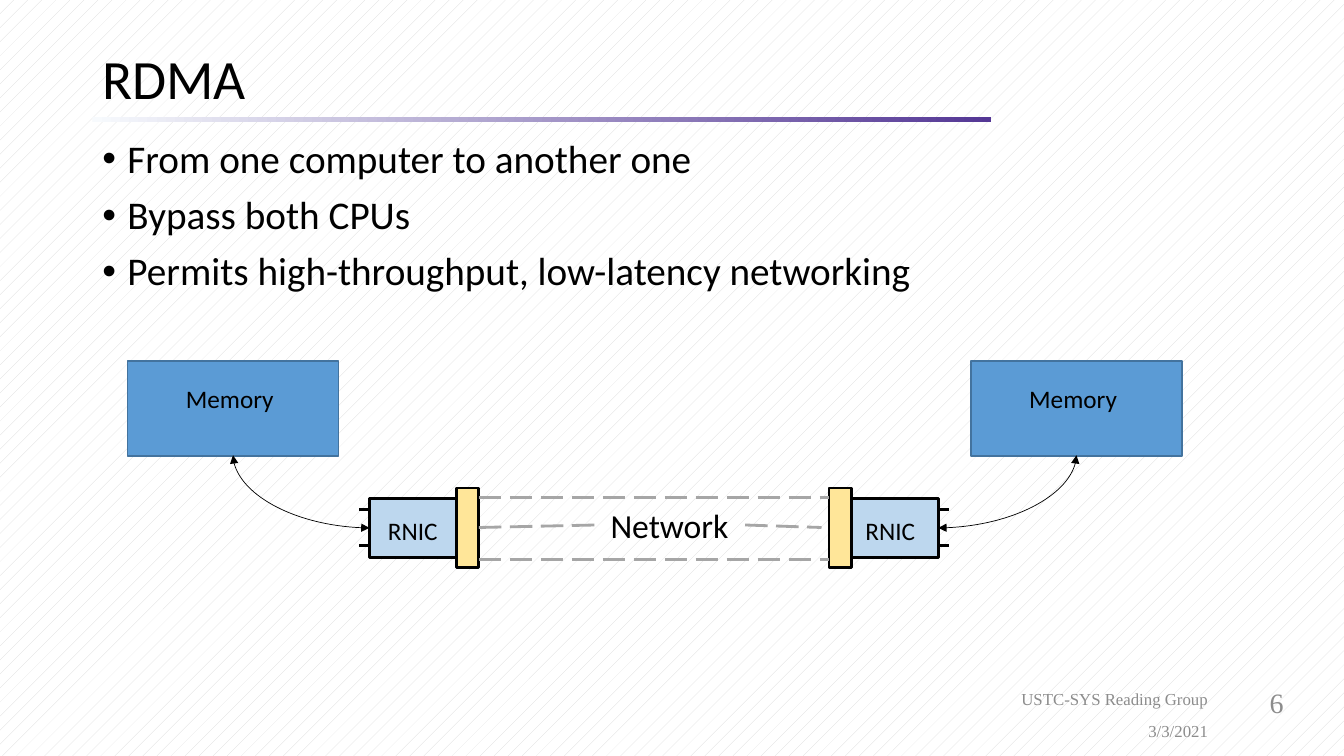
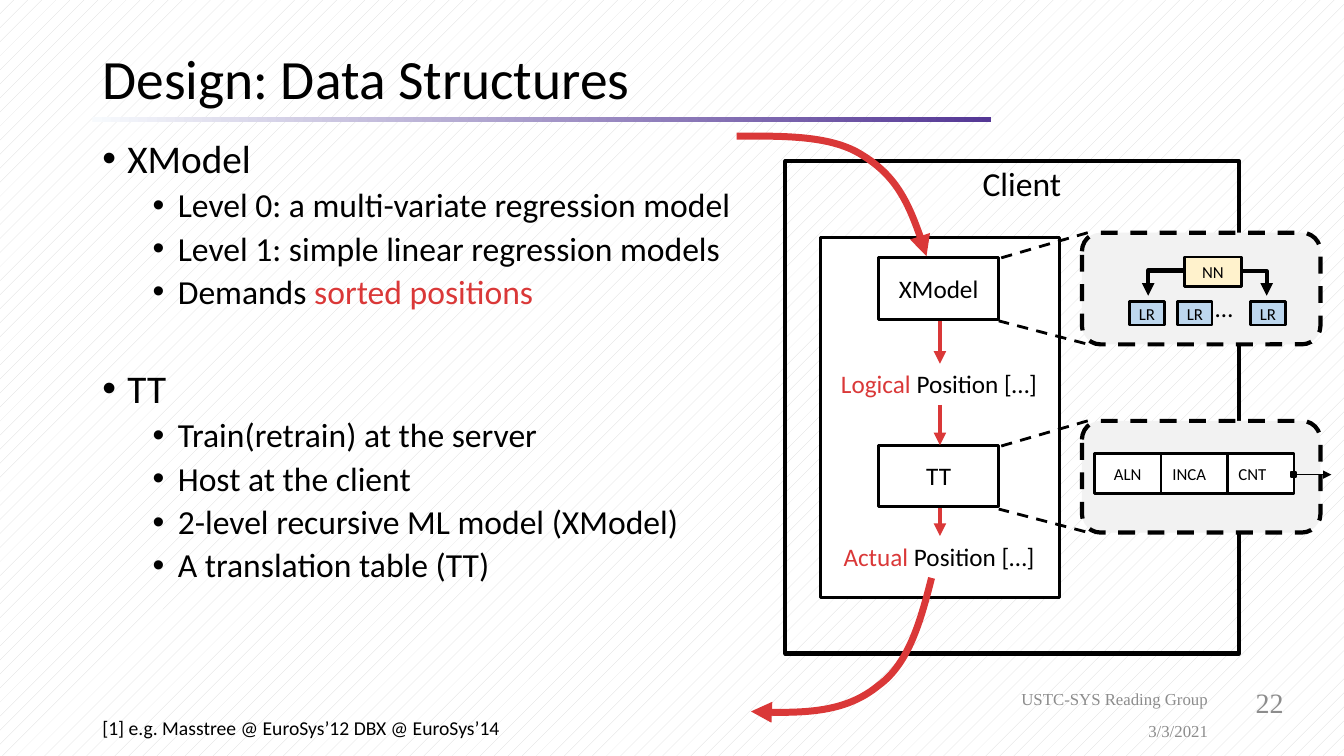
from lxml.etree import SubElement
from pptx import Presentation
from pptx.dml.color import RGBColor
from pptx.enum.dml import MSO_LINE as DASH, MSO_PATTERN as PATTERN
from pptx.enum.shapes import MSO_CONNECTOR as LINK, MSO_SHAPE as SHAPE
from pptx.enum.text import MSO_ANCHOR as ANCHOR, MSO_AUTO_SIZE as AUTO, PP_ALIGN as ALIGN
from pptx.oxml.ns import qn
from pptx.util import Inches, Pt

COLUMNS, ROWS = 160, 90  # square grid cells
CELL = Inches(1 / 12)

BLACK, WHITE, RED = "000000", "FFFFFF", "DA3838"
GREY, DASH_GREY, PANEL = "8C8C8C", "A6A6A6", "F2F2F2"
CARD_BLUE, PORT_YELLOW, ROOT_YELLOW = "BDD7EE", "FFE699", "FFF2CC"
MEMORY_BLUE, MEMORY_EDGE = "5B9BD5", "43739E"
SANS, SERIF = "Calibri", "Times New Roman"


def rgb(code):
    return RGBColor.from_string(code)


def cells(*lengths):
    return [round(length * CELL) for length in lengths]


def put(target, **values):
    for name, value in values.items():
        setattr(target, name, value)


class Deck:
    """The shared style and the slide being drawn."""

    def __init__(self):
        self.deck = Presentation()
        put(self.deck, slide_width=COLUMNS * CELL, slide_height=ROWS * CELL)
        self.shapes = None

    def new_slide(self, title, number):
        slide = self.deck.slides.add_slide(self.deck.slide_layouts[5])
        self.shapes = slide.shapes
        # Hatched background
        ground = slide.background.fill
        ground.patterned()
        ground.pattern = PATTERN.PERCENT_5
        put(ground.fore_color, rgb=rgb("D9D9D9"))
        put(ground.back_color, rgb=rgb(WHITE))
        # Title with the fading rule below it
        heading = self.shapes.title
        left, top, width, height = cells(11, 5.2, 138, 9)
        put(heading, left=left, top=top, width=width, height=height)
        put(heading.text_frame, auto_size=AUTO.NONE, word_wrap=True,
            vertical_anchor=ANCHOR.MIDDLE)
        self.typeset(heading.text_frame.paragraphs[0], title, 39.6,
                     alignment=ALIGN.LEFT, line_spacing=0.9)
        rule = self.box(11, 13.9, 107, 0.6, edge=None)
        rule.fill.gradient()
        rule.fill.gradient_angle = 0
        for stop, code in zip(rule.fill.gradient_stops, ("F7FAFD", "543795")):
            stop.color.rgb = rgb(code)
        # Footer
        for place, text, size in (
                ((118, 81.7, 36, 3.8), number, 20),
                ((91, 81.7, 54, 3.1), "USTC-SYS Reading Group", 12),
                ((109, 85.3, 36, 3.4), "3/3/2021", 12)):
            self.label(*place, text, size, GREY, SERIF, ALIGN.RIGHT, ANCHOR.MIDDLE)

    def typeset(self, paragraph, text, size, color=BLACK, font=SANS, **layout):
        """Text is a string, or a list of (words, colour) runs."""
        put(paragraph, **layout)
        for words, code in [(text, color)] if isinstance(text, str) else text:
            run = paragraph.add_run()
            run.text = words
            put(run.font, size=Pt(size), name=font)
            run.font.color.rgb = rgb(code)

    def frame(self, left, top, width, height, anchor=ANCHOR.TOP):
        area = self.shapes.add_textbox(*cells(left, top, width, height)).text_frame
        put(area, word_wrap=True, vertical_anchor=anchor)
        return area

    def label(self, left, top, width, height, text, size, color=BLACK, font=SANS,
              align=ALIGN.CENTER, anchor=ANCHOR.TOP):
        area = self.frame(left, top, width, height, anchor)
        self.typeset(area.paragraphs[0], text, size, color, font, alignment=align)

    def indent(self, paragraph, level=0, bullet=None):
        props = paragraph._p.get_or_add_pPr()
        props.set("marL", str(Inches(0.25 + 0.5 * level)))
        props.set("indent", str(Inches(-0.25)))
        if bullet:
            SubElement(props, qn("a:buFont")).set("typeface", "Arial")
            SubElement(props, qn("a:buChar")).set("char", bullet)

    def bullets(self, items):
        """Items are (level, space before, text)."""
        area = self.frame(11, 16, 138, 65.2)
        for i, (level, before, text) in enumerate(items):
            paragraph = area.add_paragraph() if i else area.paragraphs[0]
            self.typeset(paragraph, text, (28, 24)[level], line_spacing=0.9,
                         space_before=Pt(before))
            self.indent(paragraph, level, "•")

    def footnote(self, text):
        paragraph = self.frame(11, 81.7, 77.8, 7, ANCHOR.BOTTOM).paragraphs[0]
        self.typeset(paragraph, text, 14, line_spacing=0.9)
        self.indent(paragraph)

    def stroke(self, shape, color, weight, dash=None, heads=()):
        put(shape.line, width=Pt(weight))
        shape.line.color.rgb = rgb(color)
        if dash:
            shape.line.dash_style = dash
        outline = shape.element.spPr.find(qn("a:ln"))
        for end in heads:
            SubElement(outline, qn("a:" + end)).set("type", "triangle")

    def box(self, left, top, width, height, fill=None, edge=BLACK, weight=2,
            text="", size=18, pads=(0, 0, 0, 0), kind=SHAPE.RECTANGLE, dash=None):
        """Pads are left, top, right and bottom, in cells."""
        shape = self.shapes.add_shape(kind, *cells(left, top, width, height))
        shape.shadow.inherit = False
        if fill:
            shape.fill.solid()
            shape.fill.fore_color.rgb = rgb(fill)
        else:
            shape.fill.background()
        if edge:
            self.stroke(shape, edge, weight, dash)
        else:
            shape.line.fill.background()
        if text:
            sides = ("margin_left", "margin_top", "margin_right", "margin_bottom")
            put(shape.text_frame, word_wrap=True, vertical_anchor=ANCHOR.MIDDLE,
                **dict(zip(sides, cells(*pads))))
            self.typeset(shape.text_frame.paragraphs[0], text, size,
                         alignment=ALIGN.CENTER)
        return shape

    def line(self, x1, y1, x2, y2, color=BLACK, weight=2, dash=None, heads=(),
             kind=LINK.STRAIGHT):
        link = self.shapes.add_connector(kind, *cells(x1, y1, x2, y2))
        self.stroke(link, color, weight, dash, heads)
        SubElement(link.element.spPr, qn("a:effectLst"))
        return link

    def corner(self, *ends, preset, **style):
        """A link with one turn: sideways first, then up or down."""
        link = self.line(*ends, kind=LINK.ELBOW, **style)
        link.element.spPr.find(qn("a:prstGeom")).set("prst", preset)

    def sweep(self, start, *points):
        """A thick red arrow; every three points make one Bézier curve."""
        outline = self.shapes.build_freeform(*cells(*start))
        outline.add_line_segments([cells(*point) for point in points], close=False)
        shape = outline.convert_to_shape()
        route = shape.element.find(".//" + qn("a:path"))
        for i, step in enumerate(route.findall(qn("a:lnTo"))):
            if i % 3 == 0:
                curve = SubElement(route, qn("a:cubicBezTo"))
            curve.append(step[0])
            route.remove(step)
        shape.shadow.inherit = False
        shape.fill.background()
        self.stroke(shape, RED, 5, heads=["tailEnd"])


def rdma(deck):
    deck.new_slide("RDMA", "6")
    deck.bullets([(0, 0, "From one computer to another one"),
                  (0, 10, "Bypass both CPUs"),
                  (0, 10, "Permits high-throughput, low-latency networking")])

    # Two mirrored hosts: memory, network card, and the link between them
    card, port, memory = 10.3, 2.7, 25.1
    for outer, way, memory_left, shift in ((44, 1, 15.2, 0), (111.7, -1, 115.6, 1.1)):
        inner = outer + way * card
        for pin in (60.7, 64.9):
            deck.line(outer, pin, outer - way * 1.3, pin)
        deck.box(min(outer, inner), 59.3, card, 7.1, CARD_BLUE, text="RNIC",
                 pads=(0, 0.6, shift, 0))
        deck.box(min(inner, inner + way * port), 58.1, port, 9.5, PORT_YELLOW)
        deck.box(memory_left, 43, memory, 11.3, MEMORY_BLUE, MEMORY_EDGE, 1,
                 "Memory", pads=(0, 0, 0.8, 2.4))
        deck.corner(outer, 62.85, memory_left + memory / 2, 54.2, weight=0.5,
                    preset="curvedConnector2", heads=["headEnd", "tailEnd"])

    # Network between the ports
    for ends in ((57, 59.2, 98.7, 59.2), (57, 66.6, 98.7, 66.6),
                 (57, 62.8, 70.9, 62.5), (88.7, 62.5, 97.8, 62.8)):
        deck.line(*ends, color=DASH_GREY, dash=DASH.LONG_DASH)
    deck.label(70.9, 59.5, 17.6, 6, "Network", 24)


def data_structures(deck):
    deck.new_slide("Design: Data Structures", "22")
    deck.bullets([
        (0, 0, "XModel"),
        (1, 5, "Level 0: a multi-variate regression model"),
        (1, 5, "Level 1: simple linear regression models"),
        (1, 5, [("Demands ", BLACK), ("sorted positions", RED)]),
        (0, 41.4, "TT"),
        (1, 5, "Train(retrain) at the server"),
        (1, 5, "Host at the client"),
        (1, 5, "2-level recursive ML model (XModel)"),
        (1, 5, "A translation table (TT)")])
    deck.footnote("[1] e.g. Masstree @ EuroSys’12 DBX @ EuroSys’14")

    # Client and its lookup steps
    deck.box(93.5, 19.2, 54, 58.6, weight=3)
    deck.label(114.5, 18.8, 14.3, 6, "Client", 24)
    deck.box(97.7, 28.3, 28.4, 42.8, WHITE)
    for step, top, kind, position in (("XModel", 30.7, "Logical", 43.3),
                                      ("TT", 53, "Actual", 63.8)):
        deck.box(104.6, top, 14.3, 7.3, WHITE, text=step)
        deck.label(98.5, position, 26.6, 4.8,
                   [(kind, RED), (" Position […]", BLACK)], 18)

    # Flow through the steps
    deck.sweep((87.7, 16.2), (93.4, 16.2), (99, 16.1), (102.7, 18.5),
               (106.6, 20.9), (108.7, 25.1), (110.3, 30.5))
    for start, end in ((38.2, 43.3), (48.2, 53), (60.5, 63.8)):
        deck.line(111.9, start, 111.9, end, RED, 3, heads=["tailEnd"])
    deck.sweep((110.9, 68.8), (109.6, 73.9), (108.2, 79), (104.6, 81.6),
               (101.2, 84.4), (95.9, 85.1), (89.4, 84.7))

    # Zoomed panels
    for top in (27.7, 50.1):
        deck.line(129.5, top, 119.2, top + 3, dash=DASH.DASH)
        deck.line(129.2, top + 13.2, 118.9, top + 10.5, dash=DASH.DASH)
        deck.box(128.8, top, 28.4, 13.3, PANEL, weight=3,
                 kind=SHAPE.ROUNDED_RECTANGLE, dash=DASH.DASH)

    # XModel: a root network over linear regressions
    deck.box(141, 30.6, 6.8, 3.5, ROOT_YELLOW, text="NN", size=12)
    for left in (134.5, 140.2, 148.9):
        deck.box(left, 35.9, 4.1, 2.8, CARD_BLUE, text="LR", size=12)
    for ends in ((141, 32.2, 136.7, 35.2), (147.8, 32.3, 150.8, 35.2)):
        deck.corner(*ends, preset="bentConnector2", weight=3, heads=["tailEnd"])
    deck.label(143.5, 34.2, 5.6, 4.8, "…", 18, align=ALIGN.LEFT)

    # TT: one entry and its pointer
    for i, (field, shift) in enumerate((("ALN", 0), ("INCA", 1.2), ("CNT", 2))):
        deck.box(130.3 + 7.92 * i, 54, 7.92, 4.8, WHITE, text=field, size=12,
                 pads=(0, 0, shift, 0))
    deck.box(153.7, 56.2, 0.6, 0.6, BLACK, weight=1)
    deck.line(154.1, 56.5, 158.5, 56.5, weight=1, heads=["tailEnd"])


def main():
    deck = Deck()
    rdma(deck)
    data_structures(deck)
    deck.deck.save("out.pptx")


if __name__ == "__main__":
    main()
